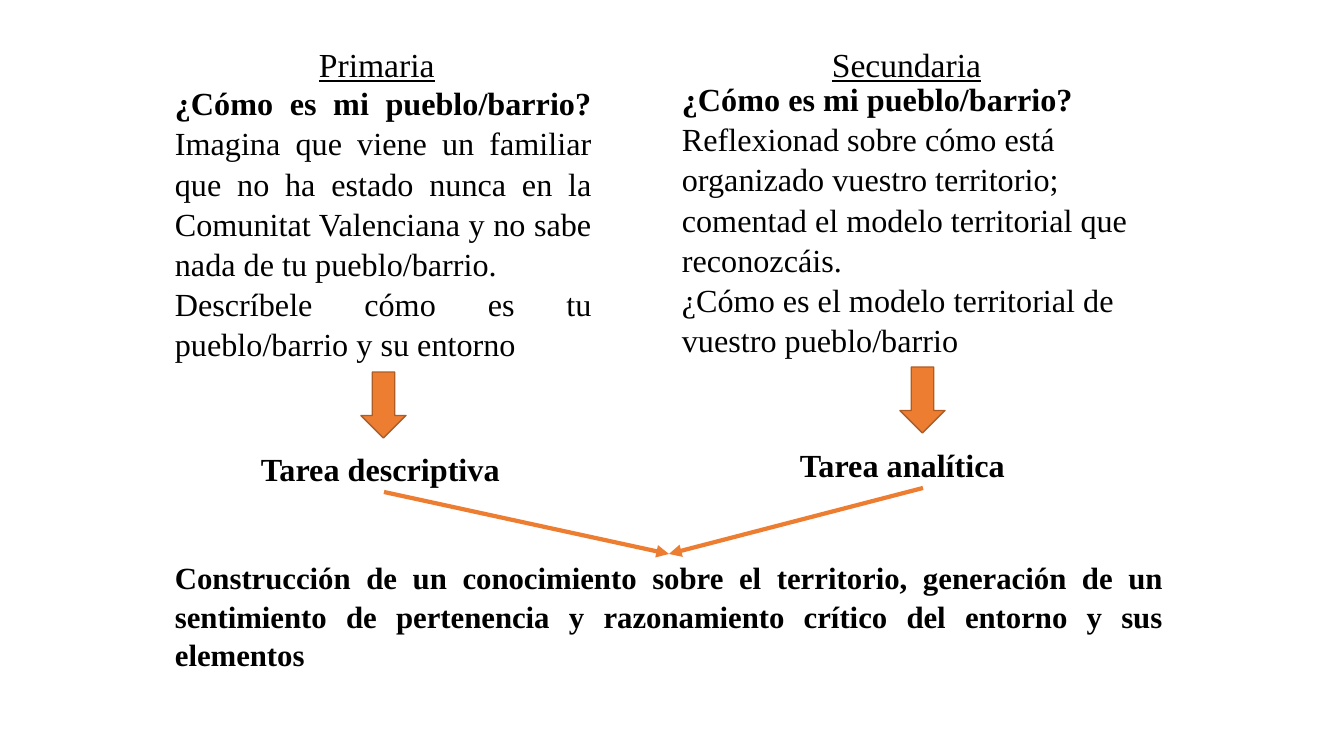
from lxml import etree
from pptx import Presentation
from pptx.dml.color import RGBColor
from pptx.enum.shapes import MSO_CONNECTOR, MSO_SHAPE
from pptx.enum.text import MSO_ANCHOR, PP_ALIGN
from pptx.oxml.ns import qn
from pptx.util import Pt

PX = 914400 / 100.8
ORANGE = RGBColor(0xED, 0x7D, 0x31)
BROWN = RGBColor(0xAF, 0x5C, 0x24)
BLACK = RGBColor(0, 0, 0)


def px(*lengths):
    """Turn pixel lengths into EMU."""
    return [round(length * PX) for length in lengths]


def add_text(box, paragraphs, size=23, bold=False, underline=False, spacing=1.04,
             align=PP_ALIGN.JUSTIFY, anchor=MSO_ANCHOR.MIDDLE, lead=""):
    """Add a text box; the bold lead opens its first paragraph."""
    frame = slide.shapes.add_textbox(*px(*box)).text_frame
    frame.word_wrap = True
    frame.vertical_anchor = anchor
    for index, text in enumerate(paragraphs):
        paragraph = frame.add_paragraph() if index else frame.paragraphs[0]
        paragraph.alignment = align
        paragraph.line_spacing = spacing
        runs = [(text, bold)]
        if lead and index == 0:
            runs.insert(0, (lead + " ", True))
        for words, is_bold in runs:
            run = paragraph.add_run()
            run.text = words
            run.font.name = "Times New Roman"
            run.font.size = Pt(size)
            run.font.bold = is_bold
            run.font.underline = underline
            run.font.color.rgb = BLACK


prs = Presentation()
prs.slide_width, prs.slide_height = px(1344, 756)
slide = prs.slides.add_slide(prs.slide_layouts[6])

QUESTION = "¿Cómo es mi pueblo/barrio?"
CONCLUSION_TIP = (669, 554)

# heading, heading box, prompt, prompt box, alignment, task, task box, arrow left and top
stages = [
    ("Primaria", (309, 39, 148, 51),
     ["Imagina que viene un familiar que no ha estado nunca en la Comunitat "
      "Valenciana y no sabe nada de tu pueblo/barrio.",
      "Descríbele cómo es tu pueblo/barrio y su entorno"],
     (165, 81, 437, 283), PP_ALIGN.JUSTIFY,
     "Tarea descriptiva", (251, 443, 265, 49), (361, 372)),
    ("Secundaria", (822, 39, 200, 51),
     ["Reflexionad sobre cómo está organizado vuestro territorio; comentad el "
      "modelo territorial que reconozcáis.",
      "¿Cómo es el modelo territorial de vuestro pueblo/barrio"],
     (672, 77, 501, 283), PP_ALIGN.LEFT,
     "Tarea analítica", (790, 439, 265, 49), (900, 367)),
]

for heading, heading_box, prompt, prompt_box, align, task, task_box, (left, top) in stages:
    add_text(heading_box, [heading], size=24, underline=True, spacing=1.0,
             anchor=MSO_ANCHOR.TOP)
    add_text(prompt_box, prompt, align=align, lead=QUESTION)
    add_text(task_box, [task], bold=True)

    down_arrow = slide.shapes.add_shape(MSO_SHAPE.DOWN_ARROW, *px(left, top, 45, 66))
    down_arrow.shadow.inherit = False
    down_arrow.fill.solid()
    down_arrow.fill.fore_color.rgb = ORANGE
    down_arrow.line.color.rgb = BROWN
    down_arrow.line.width = Pt(1)

    task_bottom = task_box[1] + task_box[3]
    link = slide.shapes.add_connector(
        MSO_CONNECTOR.STRAIGHT, *px(left + 23, task_bottom, *CONCLUSION_TIP))
    link.line.color.rgb = ORANGE
    link.line.width = Pt(3)
    etree.SubElement(link.line._get_or_add_ln(), qn("a:tailEnd"), type="triangle")
    etree.SubElement(link._element.spPr, qn("a:effectLst"))

add_text((165, 554, 1008, 122),
         ["Construcción de un conocimiento sobre el territorio, generación de un "
          "sentimiento de pertenencia y razonamiento crítico del entorno y sus elementos"],
         size=22, bold=True)

prs.save("out.pptx")
